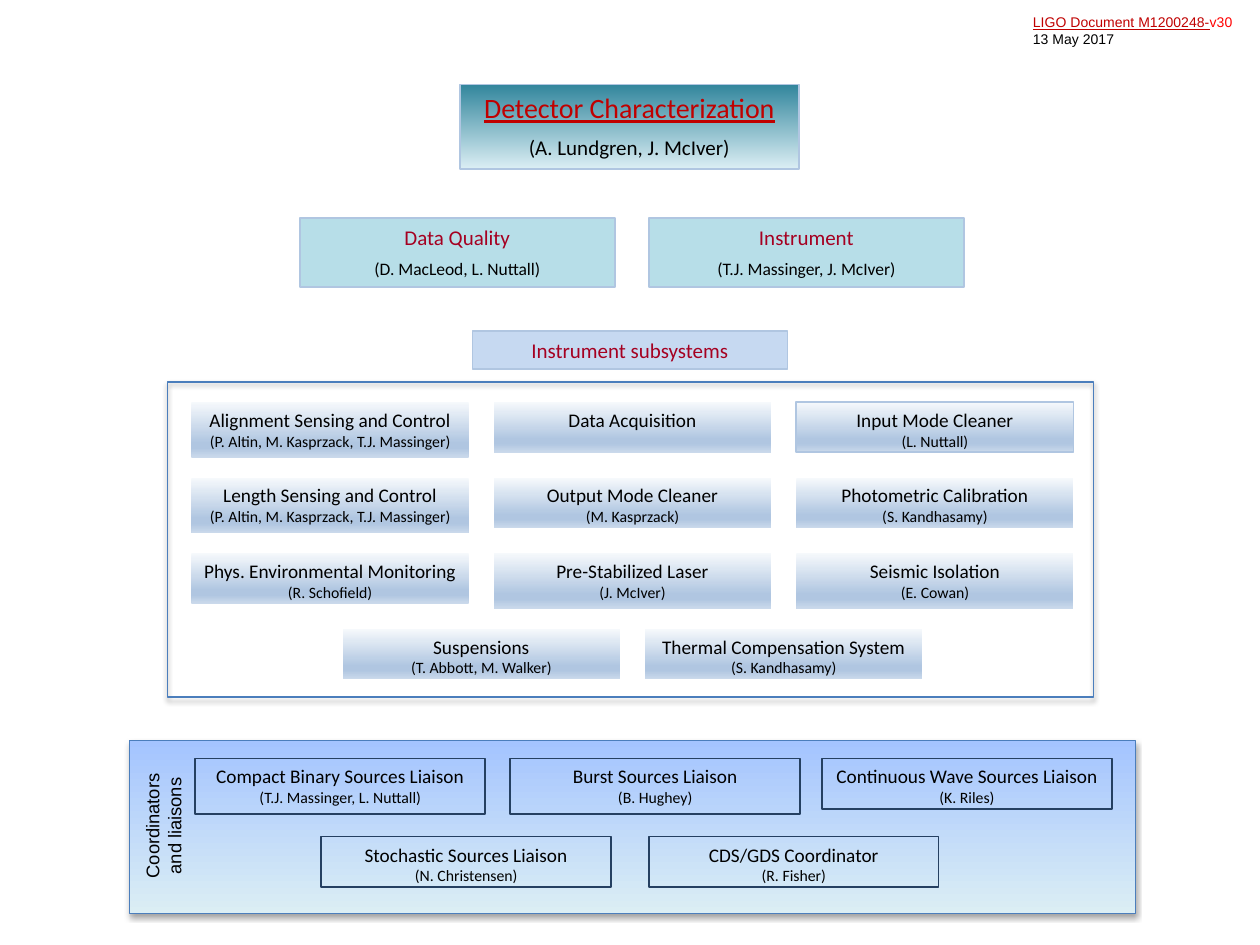
from lxml import etree
from pptx import Presentation
from pptx.dml.color import RGBColor
from pptx.enum.shapes import MSO_SHAPE
from pptx.enum.text import MSO_ANCHOR, PP_ALIGN
from pptx.oxml.ns import qn
from pptx.util import Inches, Pt

RECT = MSO_SHAPE.RECTANGLE
TOP = MSO_ANCHOR.TOP
LEFT, MID = PP_ALIGN.LEFT, PP_ALIGN.CENTER

HUES = {
    "black": "000000", "red": "C00000", "bright": "FF0000", "wine": "A50021",
    "frame": "4B7EBC", "edge": "B0C6E1", "navy": "254061",
    "aqua": "B7DEE8", "pale": "C6D9F1",
}
FADES = {
    "head": [(0, "31859C"), (100, "DBEEF4")],
    "card": [(0, "F6F9FC"), (74, "B0C6E1"), (83, "B0C6E1"), (100, "CAD9EB")],
    "panel": [(0, "A4C4FF"), (100, "DBEEF4")],
}
LOW, TALL = 0.4, 0.44
UNITS = [
    (0, 0, TALL, "Alignment Sensing and Control", "(P. Altin, M. Kasprzack, T.J. Massinger)"),
    (1, 0, LOW, "Data Acquisition", ""),
    (2, 0, LOW, "Input Mode Cleaner", "(L. Nuttall)"),
    (0, 1, TALL, "Length Sensing and Control", "(P. Altin, M. Kasprzack, T.J. Massinger)"),
    (1, 1, LOW, "Output Mode Cleaner", "(M. Kasprzack)"),
    (2, 1, LOW, "Photometric Calibration", "(S. Kandhasamy)"),
    (0, 2, LOW, "Phys. Environmental Monitoring", "(R. Schofield)"),
    (1, 2, TALL, "Pre-Stabilized Laser", "(J. McIver)"),
    (2, 2, TALL, "Seismic Isolation", "(E. Cowan)"),
    (0.5, 3, LOW, "Suspensions", "(T. Abbott, M. Walker)"),
    (1.5, 3, LOW, "Thermal Compensation System", "(S. Kandhasamy)"),
]
ROLES = [
    (1, 0, TALL, "Burst Sources Liaison", "(B. Hughey)"),
    (0, 0, TALL, "Compact Binary Sources Liaison", "(T.J. Massinger, L. Nuttall)"),
    (1.99, 0, LOW, "Continuous Wave Sources Liaison", "(K. Riles)"),
    (0.4, 1, LOW, "Stochastic Sources Liaison", "(N. Christensen)"),
    (1.44, 1, LOW, "CDS/GDS Coordinator", "(R. Fisher)"),
]


def tint(name):
    """Return the named colour."""
    return RGBColor.from_string(HUES[name])


def style(run, size, hue, face):
    """Format one run."""
    run.font.size, run.font.name = Pt(size), face
    run.font.color.rgb = tint(hue)


def write(shape, lines, face="Calibri", align=MID, gap=0):
    """Fill a shape with lines of (text, size, hue)."""
    frame = shape.text_frame
    frame.text = "\n".join(line[0] for line in lines)
    frame.vertical_anchor = TOP
    frame.word_wrap = align == LEFT
    for i, (para, (_, size, hue)) in enumerate(zip(frame.paragraphs, lines)):
        para.alignment = align
        if i and gap:
            para.space_before = Pt(size * gap)
        style(para.runs[0], size, hue, face)


def fade(shape, name):
    """Fill a shape with a top to bottom gradient."""
    shape.fill.gradient()
    shape.fill.gradient_angle = 270
    stops = shape._element.spPr.find(".//" + qn("a:gsLst"))
    for stop in list(stops):
        stops.remove(stop)
    for share, code in FADES[name]:
        stop = etree.SubElement(stops, qn("a:gs"), pos=str(share * 1000))
        etree.SubElement(stop, qn("a:srgbClr"), val=code)


def shade(shape):
    """Drop a soft shadow below a shape."""
    list_ = shape._element.spPr.find(qn("a:effectLst"))
    drop = etree.SubElement(list_, qn("a:outerShdw"), blurRad=str(Pt(3.1)),
                            dist=str(Pt(1.8)), dir="5400000", rotWithShape="0")
    ink = etree.SubElement(drop, qn("a:srgbClr"), val=HUES["black"])
    etree.SubElement(ink, qn("a:alpha"), val="35000")


def box(slide, at, fill=None, line=None, width=1):
    """Add a rectangle with a gradient, a plain fill or none."""
    shape = slide.shapes.add_shape(RECT, *map(Inches, at))
    shape.shadow.inherit = False
    if fill in FADES:
        fade(shape, fill)
    elif fill:
        shape.fill.solid()
        shape.fill.fore_color.rgb = tint(fill)
    else:
        shape.fill.background()
    if line:
        shape.line.color.rgb = tint(line)
        shape.line.width = Pt(width)
    else:
        shape.line.fill.background()
    return shape


def label(slide, at, lines, align):
    """Add a plain text box."""
    text = slide.shapes.add_textbox(*map(Inches, at))
    write(text, lines, "Arial", align)
    return text


def cards(slide, items, start, step, wide, fill, line):
    """Lay out cards of a role and its people on a grid."""
    for col, row, high, role, names in items:
        at = (start[0] + col * step[0], start[1] + row * step[1], wide, high)
        edge = "edge" if role == "Input Mode Cleaner" else line
        lines = [(role, 11, "black"), (names, 9, "black")]
        write(box(slide, at, fill, edge), lines if names else lines[:1])


def stamp(slide):
    """Add the document number and date."""
    lines = [("LIGO Document M1200248-", 8, "red"), ("13 May 2017", 8, "black")]
    text = label(slide, (8.1, 0.06, 1.84, 0.37), lines, LEFT)
    first = text.text_frame.paragraphs[0]
    first.runs[0].font.underline = True
    tail = first.add_run()
    tail.text = "v30"
    style(tail, 8, "bright", "Arial")


def heads(slide):
    """Add the lead box and the group boxes below it."""
    lead = box(slide, (3.65, 0.67, 2.69, 0.67), "head", "edge")
    write(lead, [("Detector Characterization", 16, "red"),
                 ("(A. Lundgren, J. McIver)", 12, "black")], gap=0.5)
    lead.text_frame.paragraphs[0].runs[0].font.underline = True
    groups = [("Data Quality", "(D. MacLeod, L. Nuttall)"),
              ("Instrument", "(T.J. Massinger, J. McIver)")]
    for i, (name, names) in enumerate(groups):
        group = box(slide, (2.38 + 2.77 * i, 1.73, 2.5, 0.55), "aqua", "edge")
        write(group, [(name, 12, "wine"), (names, 10, "black")], gap=0.5)
    title = box(slide, (3.75, 2.63, 2.5, 0.3), "pale", "edge")
    write(title, [("Instrument subsystems", 12, "wine")])


def main():
    """Build the chart of groups and save it."""
    deck = Presentation()
    deck.slide_width, deck.slide_height = Inches(10), Inches(7.5)
    slide = deck.slides.add_slide(deck.slide_layouts[6])
    stamp(slide)
    shade(box(slide, (1.33, 3.03, 7.35, 2.5), None, "frame"))
    cards(slide, UNITS, (1.52, 3.19), (2.4, 0.6), 2.2, "card", None)
    heads(slide)
    shade(box(slide, (1.03, 5.88, 7.98, 1.37), "panel", "frame", 0.75))
    cards(slide, ROLES, (1.55, 6.02), (2.5, 0.62), 2.3, None, "navy")
    side = [("Coordinators", 10.5, "black"), ("and liaisons", 10.5, "black")]
    label(slide, (0.61, 6.33, 1.37, 0.45), side, MID).rotation = 270
    deck.save("out.pptx")


if __name__ == "__main__":
    main()
